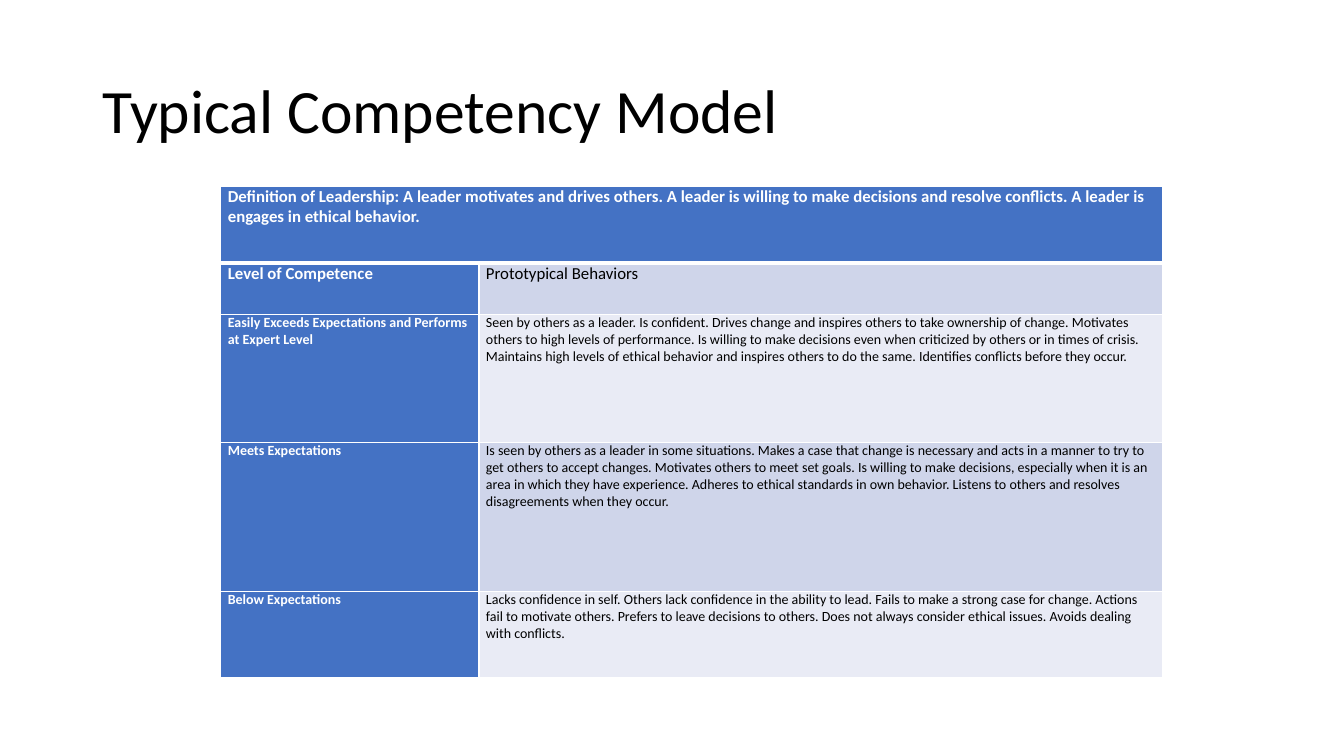
from lxml import etree
from pptx import Presentation
from pptx.dml.color import RGBColor
from pptx.enum import text as text_enum
from pptx.oxml import ns
from pptx.util import Inches, Pt

TITLE = "Typical Competency Model"
DEFINITION = (
    "Definition of Leadership: A leader motivates and drives others. "
    "A leader is willing to make decisions and resolve conflicts. "
    "A leader is engages in ethical behavior."
)
LEVELS = [
    ("Level of Competence", "Prototypical Behaviors"),
    (
        "Easily Exceeds Expectations and Performs at Expert Level",
        "Seen by others as a leader. Is confident. Drives change and inspires others "
        "to take ownership of change. Motivates others to high levels of performance. "
        "Is willing to make decisions even when criticized by others or in times of "
        "crisis. Maintains high levels of ethical behavior and inspires others to do "
        "the same. Identifies conflicts before they occur.",
    ),
    (
        "Meets Expectations",
        "Is seen by others as a leader in some situations. Makes a case that change is "
        "necessary and acts in a manner to try to get others to accept changes. "
        "Motivates others to meet set goals. Is willing to make decisions, especially "
        "when it is an area in which they have experience. Adheres to ethical "
        "standards in own behavior. Listens to others and resolves disagreements when "
        "they occur.",
    ),
    (
        "Below Expectations",
        "Lacks confidence in self. Others lack confidence in the ability to lead. "
        "Fails to make a strong case for change. Actions fail to motivate others. "
        "Prefers to leave decisions to others. Does not always consider ethical "
        "issues. Avoids dealing with conflicts.",
    ),
]
COLORS = {
    "head": "4472C4",
    "band_dark": "CFD5EA",
    "band_light": "E9EBF5",
    "light": "FFFFFF",
    "dark": "000000",
}
FONT = "Calibri"
SLIDE_SIZE = (13.33, 7.5)
TITLE_BOX = (0.92, 0.4, 11.5, 1.45)
TABLE_CORNER = (2.19, 1.85)
COLUMNS = (2.56, 6.78)
ROWS = (0.76, 0.51, 1.27, 1.48, 0.85)
SIDE_MARGIN = 0.07
THIN, THICK = 1, 3


def color(key):
    return RGBColor.from_string(COLORS[key])


def write(frame, words, size, ink="dark", bold=False, spacing=None):
    paragraph = frame.paragraphs[0]
    paragraph.alignment = text_enum.PP_ALIGN.LEFT
    paragraph.line_spacing = spacing
    run = paragraph.add_run()
    run.text = words
    run.font.name = FONT
    run.font.size = Pt(size)
    run.font.bold = bold
    run.font.color.rgb = color(ink)


def add_borders(cell, top=THIN, bottom=THIN):
    properties = cell._tc.get_or_add_tcPr()
    for side, width in (("L", THIN), ("R", THIN), ("T", top), ("B", bottom)):
        line = etree.SubElement(properties, ns.qn(f"a:ln{side}"), w=str(Pt(width)))
        fill = etree.SubElement(line, ns.qn("a:solidFill"))
        etree.SubElement(fill, ns.qn("a:srgbClr"), val=COLORS["light"])


def format_cell(cell, fill, **borders):
    cell.margin_left = cell.margin_right = Inches(SIDE_MARGIN)
    cell.margin_top = cell.margin_bottom = 0
    add_borders(cell, **borders)
    cell.fill.solid()
    cell.fill.fore_color.rgb = color(fill)


def add_title(slide):
    title = slide.shapes.title
    title.left, title.top, title.width, title.height = map(Inches, TITLE_BOX)
    title.text_frame.vertical_anchor = text_enum.MSO_ANCHOR.MIDDLE
    write(title.text_frame, TITLE, 44, spacing=0.9)


def add_competency_table(slide):
    box = map(Inches, (*TABLE_CORNER, sum(COLUMNS), sum(ROWS)))
    table = slide.shapes.add_table(len(ROWS), len(COLUMNS), *box).table
    for column, width in zip(table.columns, COLUMNS):
        column.width = Inches(width)
    for row, height in zip(table.rows, ROWS):
        row.height = Inches(height)

    definition = table.cell(0, 0)
    definition.merge(table.cell(0, 1))
    for column in range(len(COLUMNS)):
        format_cell(table.cell(0, column), "head", bottom=THICK)
    write(definition.text_frame, DEFINITION, 12, "light", bold=True)

    for row, (level, behaviors) in enumerate(LEVELS, start=1):
        size = 12 if row == 1 else 10
        top = THICK if row == 1 else THIN
        band = "band_dark" if row % 2 else "band_light"
        level_cell, behavior_cell = table.cell(row, 0), table.cell(row, 1)
        format_cell(level_cell, "head", top=top)
        write(level_cell.text_frame, level, size, "light", bold=True)
        format_cell(behavior_cell, band, top=top)
        write(behavior_cell.text_frame, behaviors, size)


def main():
    deck = Presentation()
    deck.slide_width, deck.slide_height = map(Inches, SLIDE_SIZE)
    slide = deck.slides.add_slide(deck.slide_layouts[5])
    add_title(slide)
    add_competency_table(slide)
    deck.save("out.pptx")


if __name__ == "__main__":
    main()
